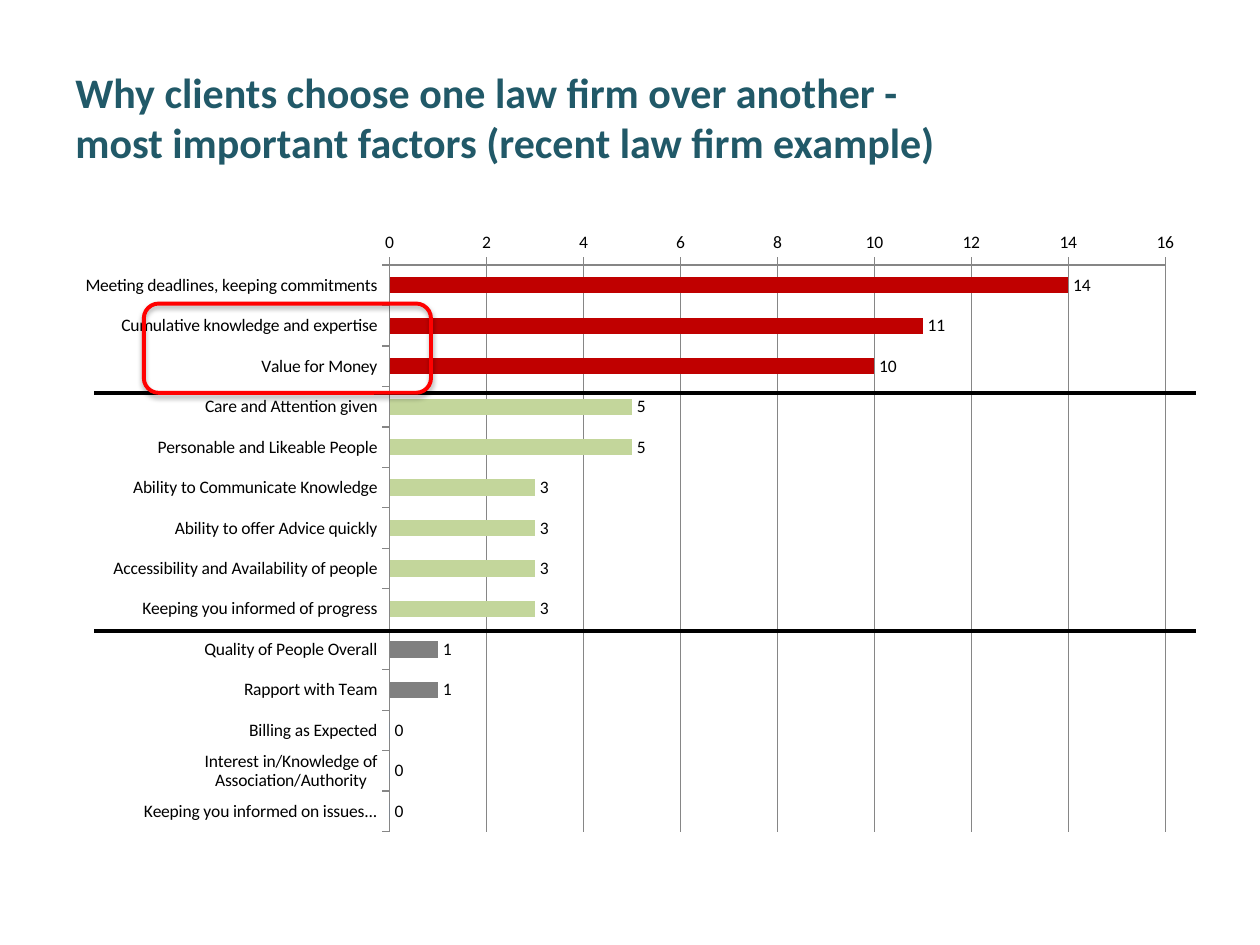
from collections import namedtuple
from dataclasses import dataclass

from lxml.etree import SubElement, fromstring
from pptx import Presentation
from pptx.chart.data import CategoryChartData
from pptx.dml.color import RGBColor
from pptx.enum.chart import XL_CHART_TYPE as ChartType
from pptx.enum.chart import XL_LABEL_POSITION as LabelPosition
from pptx.enum.chart import XL_TICK_MARK as TickMark
from pptx.enum.shapes import MSO_CONNECTOR as Connector
from pptx.enum.shapes import MSO_SHAPE as Shape
from pptx.enum.text import MSO_ANCHOR as Anchor
from pptx.oxml.ns import qn
from pptx.util import Cm, Pt

Box = namedtuple("Box", "left top width height")


@dataclass(frozen=True)
class Theme:
    font: str = "Calibri"
    title_size: float = 24
    chart_size: float = 10
    rule_width: float = 2.25
    title: str = "215968"
    text: str = "000000"
    axis: str = "868686"
    series: str = "4F81BD"
    top: str = "C00000"
    middle: str = "C3D69B"
    low: str = "808080"
    highlight: str = "FF0000"


THEME = Theme()

# Factors with their mentions, grouped by importance
FACTOR_BANDS = [
    (THEME.top, [
        ("Meeting deadlines, keeping commitments", 14),
        ("Cumulative knowledge and expertise", 11),
        ("Value for Money", 10),
    ]),
    (THEME.middle, [
        ("Care and Attention given", 5),
        ("Personable and Likeable People", 5),
        ("Ability to Communicate Knowledge", 3),
        ("Ability to offer Advice quickly", 3),
        ("Accessibility and Availability of people", 3),
        ("Keeping you informed of progress", 3),
    ]),
    (THEME.low, [
        ("Quality of People Overall", 1),
        ("Rapport with Team", 1),
        ("Billing as Expected", 0),
        ("Interest in/Knowledge of Association/Authority", 0),
        ("Keeping you informed on issues...", 0),
    ]),
]

# Plot area as fractions of the chart frame
PLOT = {"x": 0.288, "y": 0.071, "w": 0.684, "h": 0.909}

HIGHLIGHT_SHADOW = """
<a:effectLst xmlns:a="http://schemas.openxmlformats.org/drawingml/2006/main">
  <a:outerShdw blurRad="40000" dist="23000" dir="5400000" rotWithShape="0">
    <a:srgbClr val="000000"><a:alpha val="35000"/></a:srgbClr>
  </a:outerShdw>
</a:effectLst>"""


def rgb(code):
    return RGBColor.from_string(code)


def format_font(font, size, color, bold=False):
    font.name = THEME.font
    font.size = Pt(size)
    font.bold = bold
    font.color.rgb = rgb(color)


def format_line(line, color, width):
    line.color.rgb = rgb(color)
    line.width = Pt(width)


def add_text(slide, box, text, *, size, color, bold=False, anchor=Anchor.TOP):
    frame = slide.shapes.add_textbox(*map(Cm, box)).text_frame
    frame.word_wrap = True
    frame.vertical_anchor = anchor
    paragraph = frame.paragraphs[0]
    paragraph.text = text
    for run in paragraph.runs:
        format_font(run.font, size, color, bold)


def set_plot_layout(chart):
    plot_area = chart.plots[0]._element.getparent()
    for old in plot_area.findall(qn("c:layout")):
        plot_area.remove(old)
    layout = plot_area.makeelement(qn("c:layout"))
    plot_area.insert(0, layout)
    manual = SubElement(layout, qn("c:manualLayout"))
    settings = {"layoutTarget": "inner", "xMode": "edge", "yMode": "edge", **PLOT}
    for tag, value in settings.items():
        SubElement(manual, qn(f"c:{tag}")).set("val", str(value))


def add_factor_chart(slide, box):
    factors = [(name, count, color)
               for color, band in FACTOR_BANDS for name, count in band]
    data = CategoryChartData()
    data.categories = [name for name, _, _ in factors]
    data.add_series("Series 1", [count for _, count, _ in factors])
    chart = slide.shapes.add_chart(
        ChartType.BAR_CLUSTERED, *map(Cm, box), data).chart
    chart.has_legend = False
    chart.has_title = False
    format_font(chart.font, THEME.chart_size, THEME.text)
    set_plot_layout(chart)

    # Axes: first factor on top, scale along the top edge
    factor_axis, count_axis = chart.category_axis, chart.value_axis
    factor_axis.reverse_order = True
    count_axis.minimum_scale, count_axis.maximum_scale = 0, 16
    count_axis.major_unit = 2
    count_axis.has_major_gridlines = True
    for axis in (factor_axis, count_axis):
        axis.major_tick_mark = TickMark.OUTSIDE
        format_line(axis.format.line, THEME.axis, 0.75)
    format_line(count_axis.major_gridlines.format.line, THEME.axis, 0.75)

    # Bars, coloured by band
    plot = chart.plots[0]
    plot.gap_width = 150
    plot.vary_by_categories = False
    bars = plot.series[0]
    bars.format.fill.solid()
    bars.format.fill.fore_color.rgb = rgb(THEME.series)
    for index, (_, count, color) in enumerate(factors):
        if count:
            fill = bars.points[index].format.fill
            fill.solid()
            fill.fore_color.rgb = rgb(color)

    # Value labels
    plot.has_data_labels = True
    plot.data_labels.show_value = True
    plot.data_labels.position = LabelPosition.OUTSIDE_END
    format_font(plot.data_labels.font, THEME.chart_size, THEME.text)


def add_band_rules(slide, box):
    """Separate the bands with a rule along the top and bottom of the box."""
    for y in (box.top, box.top + box.height):
        rule = slide.shapes.add_connector(
            Connector.STRAIGHT, Cm(box.left), Cm(y),
            Cm(box.left + box.width), Cm(y))
        format_line(rule.line, THEME.text, THEME.rule_width)
        SubElement(rule._element.spPr, qn("a:effectLst"))


def add_highlight(slide, box):
    frame = slide.shapes.add_shape(Shape.ROUNDED_RECTANGLE, *map(Cm, box))
    frame.fill.background()
    format_line(frame.line, THEME.highlight, THEME.rule_width)
    frame._element.spPr.append(fromstring(HIGHLIGHT_SHADOW))


def main():
    deck = Presentation()
    deck.slide_width, deck.slide_height = Cm(25.4), Cm(19.05)
    slide = deck.slides.add_slide(deck.slide_layouts[6])

    add_text(slide, Box(1.27, 0.76, 20.42, 3.18),
             "Why clients choose one law firm over another -\v"
             "most important factors (recent law firm example)",
             size=THEME.title_size, color=THEME.title, bold=True,
             anchor=Anchor.MIDDLE)
    add_factor_chart(slide, Box(1.27, 4.45, 22.86, 12.57))
    add_band_rules(slide, Box(1.9, 7.92, 22.2, 4.8))
    add_highlight(slide, Box(2.9, 6.12, 5.79, 1.8))

    deck.save("out.pptx")


if __name__ == "__main__":
    main()
